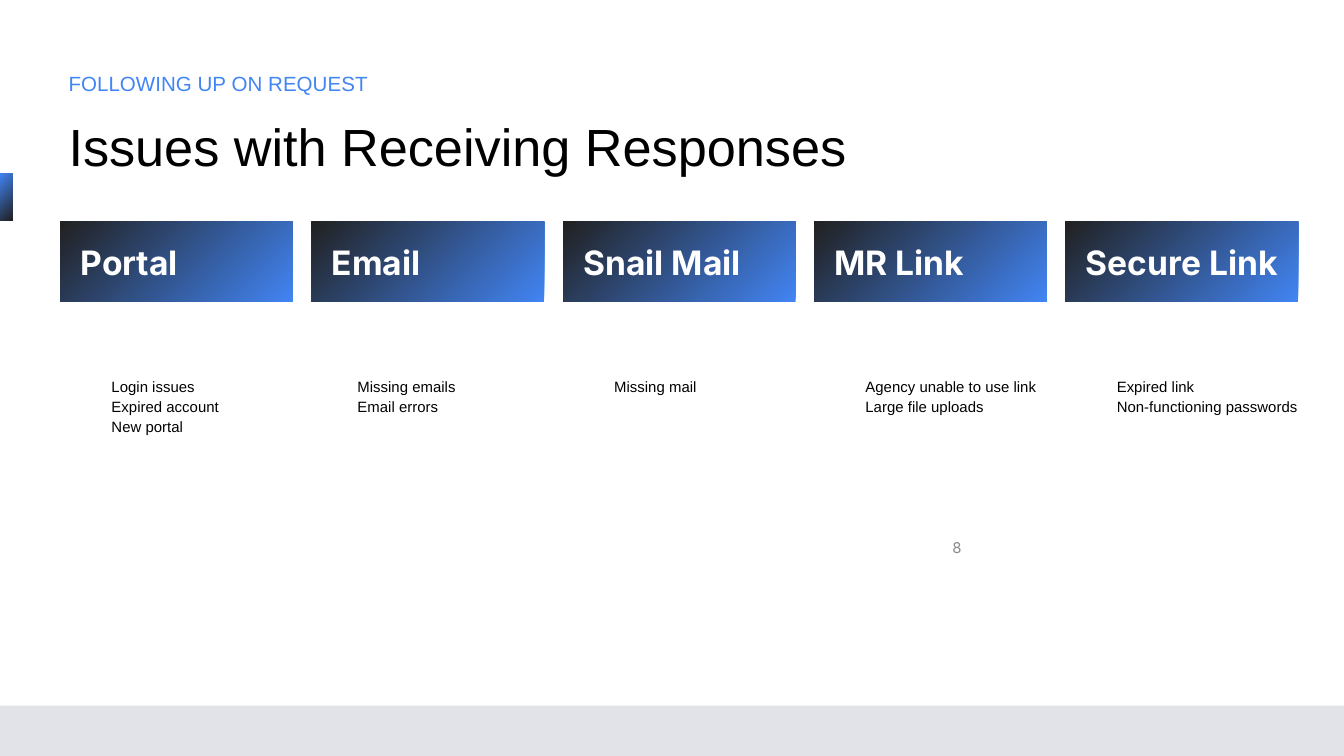
from lxml import etree
from pptx import Presentation
from pptx import util as u
from pptx.dml.color import RGBColor
from pptx.enum import shapes, text
from pptx.oxml.ns import qn

BLUE = RGBColor(0x42, 0x85, 0xF4)
DARK = RGBColor(0x21, 0x21, 0x21)
WHITE = RGBColor(0xFF, 0xFF, 0xFF)
BLACK = RGBColor(0, 0, 0)
GRAY = RGBColor(0x89, 0x89, 0x8A)
BAND = RGBColor(0xD6, 0xD8, 0xDF)
SCALE = 4572

TITLE = dict(name="Arial", size=u.Pt(28))
KICKER = dict(name="Arial", size=u.Pt(11))
HEAD = dict(name="Inter", size=u.Pt(18), bold=True)
ITEM = dict(name="Arial", size=u.Pt(8))
PAGE = dict(name="Inter", size=u.Pt(8))

LEFT, STEP, WIDE = 90, 374, 346
COLUMNS = [
    ("Portal", 0, ["Login issues", "Expired account", "New portal"]),
    ("Email", -8, ["Missing emails", "Email errors"]),
    ("Snail Mail", 0, ["Missing mail"]),
    ("MR Link", 0, ["Agency unable to use link", "Large file uploads"]),
    ("Secure Link", 0, ["Expired link", "Non-functioning passwords"]),
]


def px(*nums):
    return [u.Emu(n * SCALE) for n in nums]


class Deck:
    def __init__(self, wide, high):
        self.show = Presentation()
        self.show.slide_width, self.show.slide_height = px(wide, high)
        self.slide = self.show.slides.add_slide(self.show.slide_layouts[6])

    def rect(self, *area):
        shape = self.slide.shapes.add_shape(shapes.MSO_SHAPE.RECTANGLE, *px(*area))
        shape.shadow.inherit = False
        shape.line.fill.background()
        return shape

    def band(self, area, color, alpha):
        shape = self.rect(*area)
        shape.fill.solid()
        shape.fill.fore_color.rgb = color
        node = shape.element.spPr.find(".//" + qn("a:srgbClr"))
        etree.SubElement(node, qn("a:alpha")).set("val", str(alpha * 1000))

    def blend(self, area, turn=0):
        shape = self.rect(*area)
        shape.rotation = turn
        shape.fill.gradient()
        shape.fill.gradient_angle = 135
        for stop, color in zip(shape.fill.gradient_stops, (BLUE, DARK)):
            stop.color.rgb = color
        return shape

    def words(self, shape, lines, font, color, pad=(0, 0), anchor="TOP", align="LEFT", space=1.0):
        frame = shape.text_frame
        start, end = px(*pad)
        form = dict(word_wrap=True, margin_left=start, margin_right=end, margin_top=0,
                    margin_bottom=0, vertical_anchor=text.MSO_ANCHOR[anchor])
        for key, value in form.items():
            setattr(frame, key, value)
        frame.text = "\n".join(lines)
        for para in frame.paragraphs:
            para.alignment = text.PP_ALIGN[align]
            para.line_spacing = space
            for key, value in font.items():
                setattr(para.font, key, value)
            para.font.color.rgb = color

    def label(self, area, lines, font, color, **form):
        box = self.slide.shapes.add_textbox(*px(*area))
        self.words(box, lines, font, color, **form)

    def head(self, area, line):
        self.words(self.blend(area), [line], HEAD, WHITE, pad=(30, 30), anchor="MIDDLE")


def main():
    deck = Deck(2000, 1125)
    deck.band((0, 1050, 2000, 75), BAND, 70)
    deck.blend((0, 258, 19, 70), turn=180)
    deck.label((102, 180, 1376, 182), ["Issues with Receiving Responses"], TITLE, BLACK, space=0.9)
    deck.label((102, 102, 590, 38), ["FOLLOWING UP ON REQUEST"], KICKER, BLUE, space=1.1)
    for i, (name, shift, items) in enumerate(COLUMNS):
        x = LEFT + i * STEP
        deck.head((x, 330, WIDE, 119), name)
        deck.label((x + shift, 560, WIDE, 420), items, ITEM, BLACK, pad=(76, 0), space=1.1)
    deck.label((1404, 806, 40, 18), ["8"], PAGE, GRAY, anchor="MIDDLE", align="CENTER")
    deck.show.save("out.pptx")


if __name__ == "__main__":
    main()
